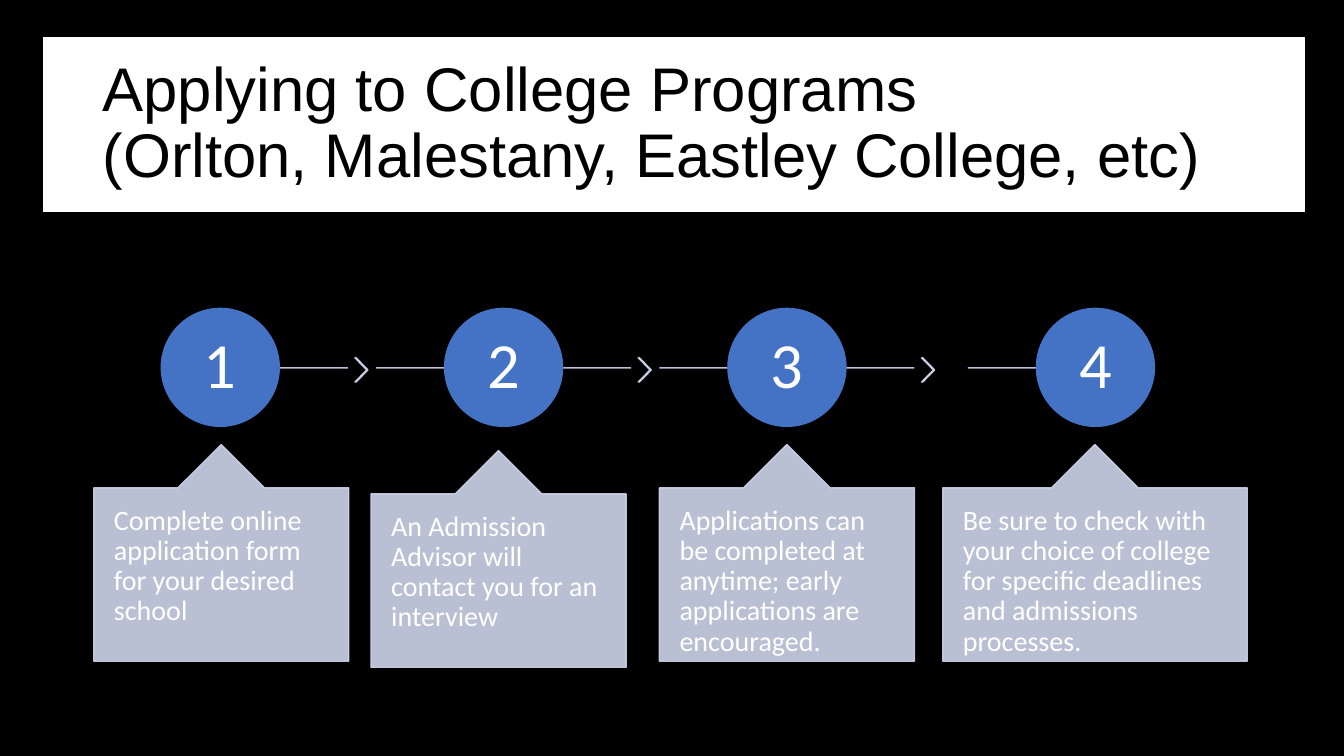
from pptx import Presentation
from pptx.dml.color import RGBColor
from pptx.enum.shapes import MSO_CONNECTOR, MSO_SHAPE
from pptx.enum.text import MSO_ANCHOR, PP_ALIGN
from pptx.oxml.ns import qn
from pptx.util import Inches, Pt
from lxml import etree

RECTANGLE, OVAL = MSO_SHAPE.RECTANGLE, MSO_SHAPE.OVAL
CHEVRON, CALLOUT = MSO_SHAPE.CHEVRON, MSO_SHAPE.UP_ARROW_CALLOUT
STRAIGHT = MSO_CONNECTOR.STRAIGHT
TOP, MIDDLE = MSO_ANCHOR.TOP, MSO_ANCHOR.MIDDLE
LEFT, CENTER = PP_ALIGN.LEFT, PP_ALIGN.CENTER

THEME = {
    "black": RGBColor(0, 0, 0),
    "white": RGBColor(255, 255, 255),
    "blue": RGBColor(0x44, 0x72, 0xC4),
    "pale": RGBColor(0xCF, 0xD5, 0xEA),
    "pale_alpha": "90000",
    "heading_font": "Arial",
    "body_font": "Calibri",
    "title_size": Pt(44),
    "number_size": Pt(46),
    "body_size": Pt(20),
    "outline": Pt(1),
}

deck = Presentation()
deck.slide_width, deck.slide_height = Inches(13.33), Inches(7.5)
page = deck.slides.add_slide(deck.slide_layouts[6])
page.background.fill.solid()
page.background.fill.fore_color.rgb = THEME["black"]


def add_figure(kind, left, top, width, height, color, adjustments=()):
    shape = page.shapes.add_shape(
        kind, Inches(left), Inches(top), Inches(width), Inches(height))
    shape.shadow.inherit = False
    shape.fill.solid()
    shape.fill.fore_color.rgb = THEME[color]
    shape.line.color.rgb = THEME[color]
    shape.line.width = THEME["outline"]
    for index, value in enumerate(adjustments):
        shape.adjustments[index] = value
    if color == "pale":
        for paint in shape.fill._xPr.iter(qn("a:srgbClr")):
            etree.SubElement(paint, qn("a:alpha"), val=THEME["pale_alpha"])
    return shape


def write_text(shape, text, font, size, color, anchor, align, inset_x, inset_y):
    box = shape.text_frame
    frame_format = {
        "word_wrap": True, "vertical_anchor": anchor,
        "margin_left": Inches(inset_x), "margin_right": Inches(inset_x),
        "margin_top": Inches(inset_y), "margin_bottom": Inches(inset_y),
    }
    for name, value in frame_format.items():
        setattr(box, name, value)
    para = box.paragraphs[0]
    para.text = text
    para.alignment = align
    para.line_spacing = 0.9
    for span in para.runs:
        for name, value in {"name": THEME[font], "size": THEME[size]}.items():
            setattr(span.font, name, value)
        span.font.color.rgb = THEME[color]


banner = add_figure(RECTANGLE, 0.43, 0.37, 12.51, 1.73, "white")
title = page.shapes.add_textbox(
    Inches(0.92), Inches(0.51), Inches(11.5), Inches(1.45))
write_text(title, "Applying to College Programs\v(Orlton, Malestany, Eastley College, etc)",
           "heading_font", "title_size", "black", MIDDLE, LEFT, 0.1, 0.05)

CIRCLE_TOP, CIRCLE_SIZE = 3.06, 1.17
LINE_Y = 3.65
CALLOUT_HEIGHT = 2.15
CHEVRON_START, CHEVRON_PITCH = 3.52, 2.81

steps = [
    {"text": "Complete online application form for your desired school",
     "line": (2.33, 3.45), "circle": 1.6, "callout": (0.93, 4.41, 2.53)},
    {"text": "An Admission Advisor will contact you for an interview",
     "line": (3.73, 6.26), "circle": 4.41, "callout": (3.68, 4.47, 2.53)},
    {"text": "Applications can be completed at anytime; early applications are encouraged.",
     "line": (6.54, 9.07), "circle": 7.22, "callout": (6.54, 4.41, 2.53)},
    {"text": "Be sure to check with your choice of college for specific deadlines "
             "and admissions processes.",
     "line": (9.6, 10.86), "circle": 10.28, "callout": (9.35, 4.41, 3.02)},
]

for index, step in enumerate(steps):
    start, end = step["line"]
    track = page.shapes.add_connector(
        STRAIGHT, Inches(start), Inches(LINE_Y), Inches(end), Inches(LINE_Y))
    track.line.color.rgb = THEME["pale"]
    track.line.width = THEME["outline"]
    properties = track._element.spPr
    for paint in properties.iter(qn("a:srgbClr")):
        etree.SubElement(paint, qn("a:alpha"), val=THEME["pale_alpha"])
    etree.SubElement(properties, qn("a:effectLst"))

    if index < len(steps) - 1:
        add_figure(CHEVRON, CHEVRON_START + index * CHEVRON_PITCH, 3.55,
                   0.13, 0.24, "pale", [0.9])

    circle = add_figure(OVAL, step["circle"], CIRCLE_TOP,
                        CIRCLE_SIZE, CIRCLE_SIZE, "blue")
    write_text(circle, str(index + 1), "body_font", "number_size", "white",
               MIDDLE, CENTER, 0.05, 0.05)

    left, top, width = step["callout"]
    callout = add_figure(CALLOUT, left, top, width, CALLOUT_HEIGHT, "pale",
                         [0.5, 0.2, 0.2, 1])
    write_text(callout, step["text"], "body_font", "body_size", "white",
               TOP, LEFT, 0.2, 0.18)

deck.save("out.pptx")
